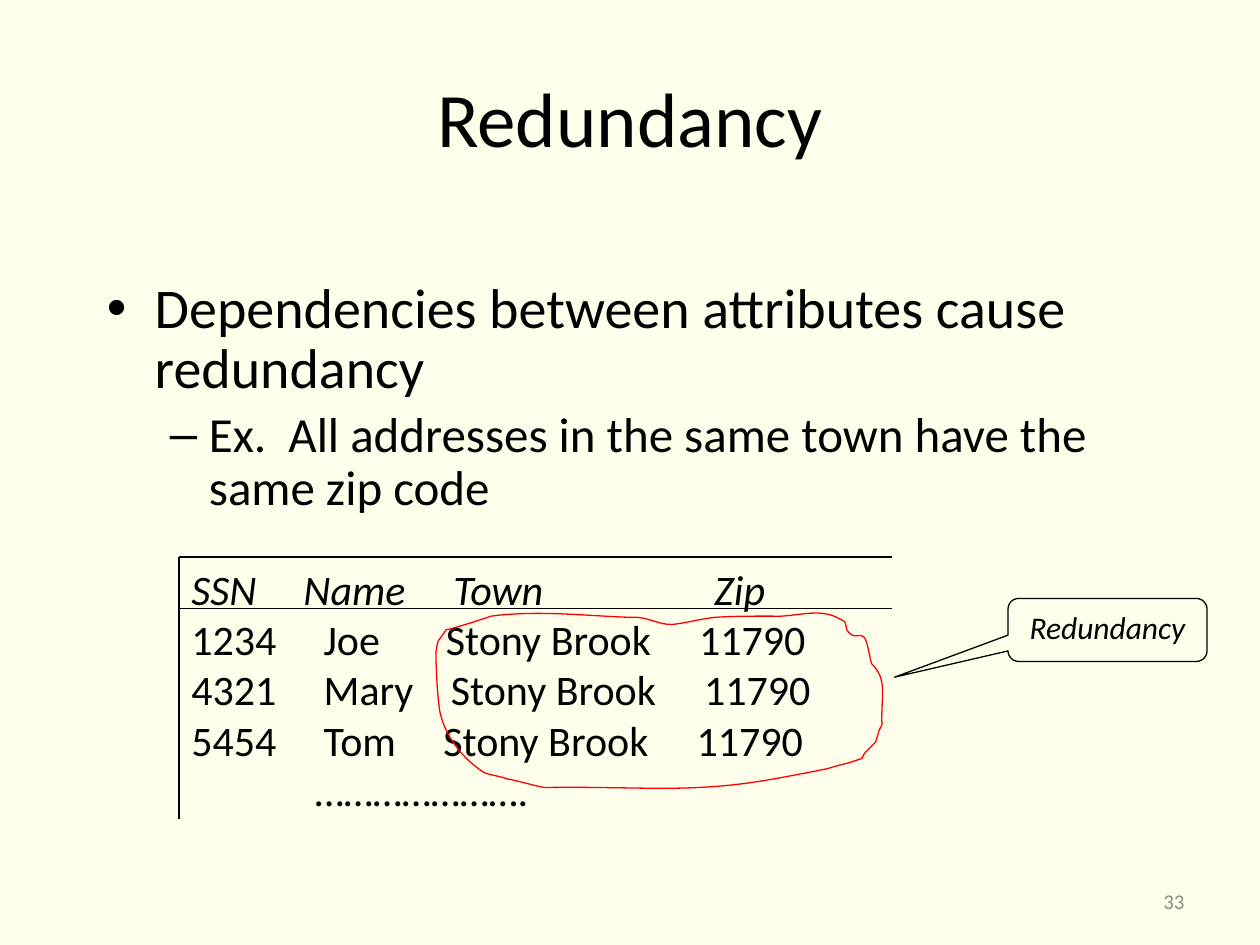
from pptx import Presentation, util as u
from pptx.dml.color import RGBColor
from pptx.enum import shapes, text
from pptx.oxml.ns import qn
from lxml import etree

COLORS = {"back": "FFFFEB", "ink": "000000", "number": "8C8C8C", "loop": "FF0000"}
I = u.Inches
LEFT, RIGHT, TOP, RULE, BOTTOM = 1.42, 7.08, 4.42, 4.83, 6.5
LOOP_START = (6.92, 5.27)
LOOP_CURVES = [
    (6.9, 5.22, 6.89, 5.1, 6.86, 5.06), (6.82, 5.02, 6.79, 5.07, 6.75, 5.03),
    (6.69, 4.99, 6.74, 4.94, 6.68, 4.92), (6.62, 4.89, 6.61, 4.88, 6.54, 4.87),
    (6.42, 4.85, 6.25, 4.9, 6.13, 4.89), (5.98, 4.89, 5.81, 4.89, 5.67, 4.9),
    (5.58, 4.91, 5.46, 4.94, 5.38, 4.95), (5.25, 4.98, 5.15, 4.89, 5.02, 4.9),
    (4.67, 4.89, 4.27, 4.84, 3.9, 4.89), (3.78, 4.93, 3.66, 4.97, 3.54, 5),
    (3.46, 5.12, 3.48, 5.06, 3.46, 5.18), (3.46, 5.26, 3.47, 5.51, 3.49, 5.64),
    (3.53, 5.84, 3.67, 6.02, 3.84, 6.13), (3.88, 6.15, 3.97, 6.16, 4.02, 6.18),
    (4.12, 6.2, 4.22, 6.23, 4.32, 6.25), (5.05, 6.24, 5.4, 6.29, 5.97, 6.21),
    (6.17, 6.18, 6.37, 6.14, 6.57, 6.1), (6.63, 6.08, 6.68, 6.07, 6.75, 6.05),
    (6.78, 6.04, 6.84, 6.02, 6.84, 6.02), (6.85, 6, 6.86, 5.98, 6.87, 5.97),
    (6.9, 5.94, 6.95, 5.89, 6.95, 5.89), (6.96, 5.86, 6.97, 5.82, 6.98, 5.79),
    (6.99, 5.78, 7, 5.75, 7, 5.75), (6.99, 5.52, 7.05, 5.4, 6.92, 5.27),
]


class Deck:
    font = "Calibri"
    align = text.PP_ALIGN

    def __init__(self, width, height):
        self.prs = Presentation()
        self.prs.slide_width, self.prs.slide_height = I(width), I(height)
        self.s = self.prs.slides.add_slide(self.prs.slide_layouts[5])
        self.s.background.fill.solid()
        self.s.background.fill.fore_color.rgb = self.color("back")

    def color(self, name):
        return RGBColor.from_string(COLORS[name])

    def run(self, p, words, size, color="ink", italic=False, align=None):
        r = p.add_run()
        r.text = words
        r.font.name, r.font.size, r.font.italic = self.font, u.Pt(size), italic
        r.font.color.rgb = self.color(color)
        p.alignment = align

    def title(self, words, *box):
        sp = self.s.shapes.title
        sp.left, sp.top, sp.width, sp.height = map(I, box)
        sp.text_frame.vertical_anchor = text.MSO_ANCHOR.MIDDLE
        self.run(sp.text_frame.paragraphs[0], words, 44, align=self.align.CENTER)

    def box(self, *box, anchor=text.MSO_ANCHOR.TOP):
        tf = self.s.shapes.add_textbox(*map(I, box)).text_frame
        tf.word_wrap, tf.vertical_anchor = True, anchor
        return tf

    def paragraph(self, tf):
        first = tf.paragraphs[0]
        return tf.add_paragraph() if first.runs else first

    def bullet(self, tf, words, size, char, left, hang, level=0):
        p = self.paragraph(tf)
        p.level, p.line_spacing, p.space_before = level, 0.9, u.Pt(size * 0.2)
        pPr = p._p.get_or_add_pPr()
        pPr.set("marL", str(I(left)))
        pPr.set("indent", str(-I(hang)))
        etree.SubElement(pPr, qn("a:buFont"), typeface="Arial")
        etree.SubElement(pPr, qn("a:buChar"), char=char)
        self.run(p, words, size)

    def row(self, tf, cells, stops, italic=False):
        p = self.paragraph(tf)
        tabs = etree.SubElement(p._p.get_or_add_pPr(), qn("a:tabLst"))
        for stop in stops:
            etree.SubElement(tabs, qn("a:tab"), pos=str(I(stop)), algn="l")
        self.run(p, "\t".join(cells), 24, italic=italic)

    def indented(self, tf, words, left):
        p = self.paragraph(tf)
        p._p.get_or_add_pPr().set("marL", str(I(left)))
        self.run(p, words, 24)

    def outline(self, sp, color="ink"):
        sp.line.color.rgb, sp.line.width = self.color(color), u.Pt(0.75)

    def rule(self, *ends):
        sp = self.s.shapes.add_connector(shapes.MSO_CONNECTOR.STRAIGHT, *map(I, ends))
        self.outline(sp)
        etree.SubElement(sp._element.spPr, qn("a:effectLst"))

    def loop(self, start, curves, color):
        fb = self.s.shapes.build_freeform(*map(I, start))
        fb.add_line_segments([(I(c[4]), I(c[5])) for c in curves], close=True)
        sp = fb.convert_to_shape()
        for line, c in zip(list(sp._element.iter(qn("a:lnTo"))), curves):
            line.tag = qn("a:cubicBezTo")
            line.remove(line[0])
            for x, y in zip(c[::2], c[1::2]):
                etree.SubElement(line, qn("a:pt"), x=str(I(x) - sp.left), y=str(I(y) - sp.top))
        sp.shadow.inherit = False
        sp.fill.background()
        self.outline(sp, color)

    def callout(self, words, adjustments, *box):
        kind = shapes.MSO_SHAPE.ROUNDED_RECTANGULAR_CALLOUT
        sp = self.s.shapes.add_shape(kind, *map(I, box))
        for k, value in enumerate(adjustments):
            sp.adjustments[k] = value
        sp.shadow.inherit = False
        sp.fill.background()
        self.outline(sp)
        tf = sp.text_frame
        tf.vertical_anchor = text.MSO_ANCHOR.TOP
        self.run(tf.paragraphs[0], words, 18, italic=True, align=self.align.CENTER)


def main():
    d = Deck(10, 7.5)
    number = d.box(7.17, 6.95, 2.33, 0.4, anchor=text.MSO_ANCHOR.MIDDLE)
    d.run(number.paragraphs[0], "33", 12, "number", align=d.align.RIGHT)
    d.title("Redundancy", 0.5, 0.3, 9, 1.25)

    body = d.box(0.75, 2.17, 8.5, 2.25)
    d.bullet(body, "Dependencies between attributes cause redundancy", 32, "•", 0.38, 0.38)
    d.bullet(body, "Ex.  All addresses in the same town have the same zip code",
             28, "–", 0.81, 0.31, level=1)

    records = d.box(LEFT, TOP, 5.28, 2.1)
    d.row(records, ("SSN", "Name", "Town", "Zip"), (0.89, 2.08, 4.15), italic=True)
    for ssn, name, town in (("1234", "Joe", 2.02), ("4321", "Mary", 2.06), ("5454", "Tom", 2)):
        d.row(records, (ssn, name, "Stony Brook", "11790"), (1.05, town, town + 2.01))
    d.indented(records, "………………….", 0.98)

    for y in (RULE, TOP):
        d.rule(LEFT, y, RIGHT, y)
    d.rule(LEFT, TOP, LEFT, BOTTOM)
    d.loop(LOOP_START, LOOP_CURVES, "loop")
    d.callout("Redundancy", (-1.07, 0.75, 0.17), 8, 4.75, 1.58, 0.5)
    d.prs.save("out.pptx")


if __name__ == "__main__":
    main()
